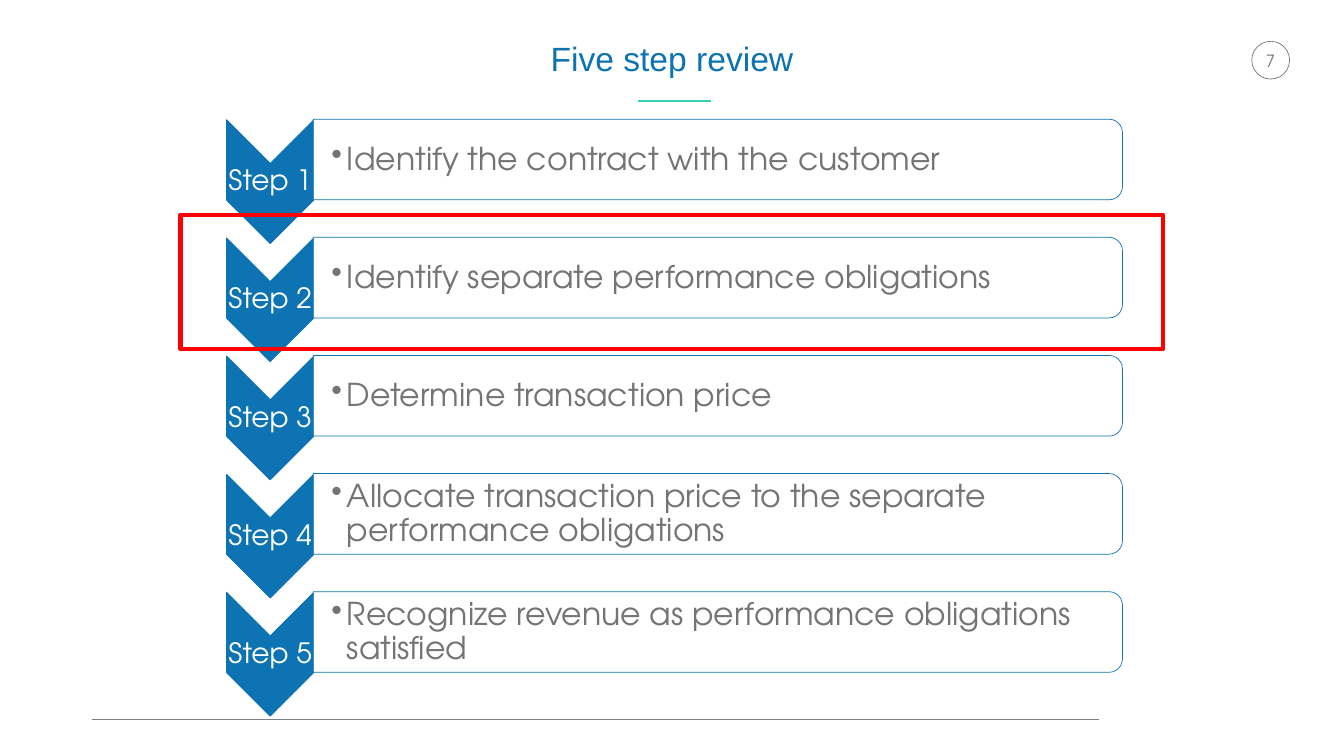
from lxml.etree import SubElement
from pptx import Presentation
from pptx.dml.color import RGBColor
from pptx.enum.shapes import MSO_CONNECTOR, MSO_SHAPE
from pptx.enum.text import MSO_ANCHOR, MSO_AUTO_SIZE, PP_ALIGN
from pptx.oxml.ns import qn
from pptx.util import Pt

BLUE = RGBColor(0x0D, 0x73, 0xB2)
TEAL = RGBColor(0x33, 0xD1, 0xAD)
RED = RGBColor(0xFF, 0x00, 0x00)
TEXT_GREY = RGBColor(0x73, 0x75, 0x72)
RULE_GREY = RGBColor(0x80, 0x80, 0x80)
WHITE = RGBColor(0xFF, 0xFF, 0xFF)

HEADING_FONT = "Arial"
BODY_FONT = "TeX Gyre Adventor"

STEPS = [
    "Identify the contract with the customer",
    "Identify separate performance obligations",
    "Determine transaction price",
    "Allocate transaction price to the separate performance obligations",
    "Recognize revenue as performance obligations satisfied",
]
STEP_PITCH = 168.75
CHEVRON_CENTRE = (385.9, 259.6)
CHEVRON_SIZE = (177.1, 124.6)
BAR_CENTRE = (1025.3, 227.9)
BAR_SIZE = (115.2, 1155.6)
HANGING_INDENT = 22.3


def centred(centre_x, centre_y, width, height):
    """Return left, top, width, height of a box around a centre."""
    return centre_x - width / 2, centre_y - height / 2, width, height


class SlideBuilder:
    """Holds the text styles and the slide that is being filled."""

    STYLES = {
        "title": dict(name=HEADING_FONT, size=Pt(48), bold=False),
        "number": dict(name=BODY_FONT, size=Pt(24)),
        "label": dict(name=BODY_FONT, size=Pt(40)),
        "item": dict(name=BODY_FONT, size=Pt(45)),
    }

    def __init__(self, slide):
        self.slide = slide

    def fill_text(self, holder, text, style, color, insets, frame_format, paragraph_format):
        frame = holder.text_frame
        frame.text = text
        margins = dict(zip(("margin_left", "margin_top", "margin_right", "margin_bottom"),
                           map(Pt, insets)))
        for key, value in {**margins, **frame_format}.items():
            setattr(frame, key, value)
        paragraph = frame.paragraphs[0]
        for key, value in paragraph_format.items():
            setattr(paragraph, key, value)
        font = paragraph.runs[0].font
        for key, value in self.STYLES[style].items():
            setattr(font, key, value)
        font.color.rgb = color
        return paragraph

    def title(self, text, box):
        heading = self.slide.shapes.title
        heading.left, heading.top, heading.width, heading.height = map(Pt, box)
        self.fill_text(heading, text, "title", BLUE, (7.2, 3.6, 7.2, 3.6),
                       dict(word_wrap=True, vertical_anchor=MSO_ANCHOR.TOP,
                            auto_size=MSO_AUTO_SIZE.NONE),
                       dict(alignment=PP_ALIGN.CENTER, line_spacing=0.9))

    def text(self, text, box, style, color, insets, wrap=True,
             anchor=MSO_ANCHOR.MIDDLE, **paragraph_format):
        holder = self.slide.shapes.add_textbox(*map(Pt, box))
        return self.fill_text(holder, text, style, color, insets,
                              dict(word_wrap=wrap, vertical_anchor=anchor), paragraph_format)

    def bullet(self, text, box):
        paragraph = self.text(text, box, "item", TEXT_GREY, (25.2, 2.2, 2.2, 2.2),
                              level=1, line_spacing=0.9)
        properties = paragraph._p.get_or_add_pPr()
        properties.set("marL", str(Pt(HANGING_INDENT)))
        properties.set("indent", str(-Pt(HANGING_INDENT)))
        SubElement(properties, qn("a:buChar")).set("char", "•")

    def shape(self, preset, box, line, weight=1, fill=None, opacity=None, rotation=0):
        shape = self.slide.shapes.add_shape(preset, *map(Pt, box))
        shape.shadow.inherit = False
        shape.rotation = rotation
        shape.line.color.rgb = line
        shape.line.width = Pt(weight)
        if fill is None:
            shape.fill.background()
            return
        shape.fill.solid()
        shape.fill.fore_color.rgb = fill
        if opacity is not None:
            color = shape._element.spPr.find(qn("a:solidFill"))[0]
            SubElement(color, qn("a:alpha")).set("val", str(opacity * 1000))

    def rule(self, start_x, end_x, y, color, weight):
        line = self.slide.shapes.add_connector(
            MSO_CONNECTOR.STRAIGHT, Pt(start_x), Pt(y), Pt(end_x), Pt(y))
        line.line.color.rgb = color
        line.line.width = Pt(weight)
        SubElement(line._element.spPr, qn("a:effectLst"))

    def step(self, index, text):
        offset = index * STEP_PITCH
        chevron_x, chevron_y = CHEVRON_CENTRE[0], CHEVRON_CENTRE[1] + offset
        bar_x, bar_y = BAR_CENTRE[0], BAR_CENTRE[1] + offset
        self.shape(MSO_SHAPE.CHEVRON, centred(chevron_x, chevron_y, *CHEVRON_SIZE),
                   BLUE, fill=BLUE, rotation=90)
        self.text(f"Step {index + 1}", centred(chevron_x, chevron_y, 124.6, 53.3),
                  "label", WHITE, (2.2, 2.2, 2.2, 2.2),
                  alignment=PP_ALIGN.CENTER, line_spacing=0.9)
        self.shape(MSO_SHAPE.ROUND_2_SAME_RECTANGLE, centred(bar_x, bar_y, *BAR_SIZE),
                   BLUE, fill=WHITE, opacity=90, rotation=90)
        self.bullet(text, (448, bar_y - 51.5, 1149.8, 104.4))


def main():
    deck = Presentation()
    deck.slide_width, deck.slide_height = Pt(1919.5), Pt(1080)
    title_only = deck.slide_layouts[5]
    builder = SlideBuilder(deck.slides.add_slide(title_only))

    builder.rule(131.8, 1569.6, 1028.2, RULE_GREY, 1)
    builder.text("7", (1785.6, 64.8, 58.3, 43.9), "number", TEXT_GREY,
                 (14.4, 7.2, 14.4, 7.2), wrap=False, anchor=MSO_ANCHOR.TOP,
                 alignment=PP_ALIGN.CENTER)
    builder.shape(MSO_SHAPE.OVAL, (1787.8, 59, 54, 54), TEXT_GREY)
    builder.title("Five step review", (761.8, 56.9, 396, 59.8))
    builder.rule(1015.2, 911.5, 144, TEAL, 3)
    for index, text in enumerate(STEPS):
        builder.step(index, text)
    builder.shape(MSO_SHAPE.RECTANGLE, (257.8, 306.7, 1403.3, 192.2), RED, weight=6)

    deck.save("out.pptx")


if __name__ == "__main__":
    main()
